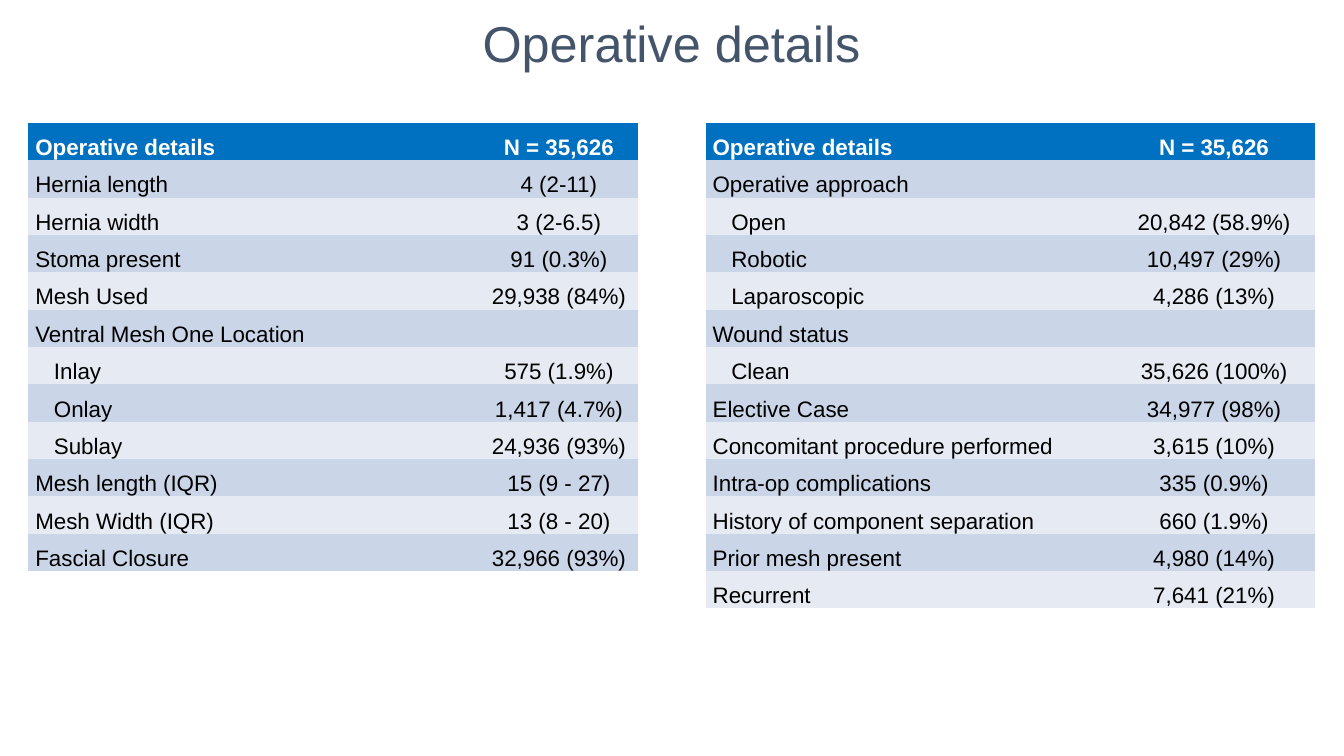
from pptx import Presentation
from pptx.dml.color import RGBColor
from pptx.enum.text import MSO_ANCHOR, PP_ALIGN
from pptx.oxml.ns import qn
from pptx.util import Cm, Pt

TITLE = "Operative details"
HEADER = ("Operative details", "N = 35,626", 0)

LEFT_ROWS = [
    HEADER,
    ("Hernia length", "4 (2-11)", 0),
    ("Hernia width", "3 (2-6.5)", 0),
    ("Stoma present", "91 (0.3%)", 0),
    ("Mesh Used", "29,938 (84%)", 0),
    ("Ventral Mesh One Location", "", 0),
    ("Inlay", "575 (1.9%)", 1),
    ("Onlay", "1,417 (4.7%)", 1),
    ("Sublay", "24,936 (93%)", 1),
    ("Mesh length (IQR)", "15 (9 - 27)", 0),
    ("Mesh Width (IQR)", "13 (8 - 20)", 0),
    ("Fascial Closure", "32,966 (93%)", 0),
]
RIGHT_ROWS = [
    HEADER,
    ("Operative approach", "", 0),
    ("Open", "20,842 (58.9%)", 1),
    ("Robotic", "10,497 (29%)", 1),
    ("Laparoscopic", "4,286 (13%)", 1),
    ("Wound status", "", 0),
    ("Clean", "35,626 (100%)", 1),
    ("Elective Case", "34,977 (98%)", 0),
    ("Concomitant procedure performed", "3,615 (10%)", 0),
    ("Intra-op complications", "335 (0.9%)", 0),
    ("History of component separation", "660 (1.9%)", 0),
    ("Prior mesh present", "4,980 (14%)", 0),
    ("Recurrent", "7,641 (21%)", 0),
]
TABLES = [
    (Cm(0.71), (Cm(11.38), Cm(3.99)), LEFT_ROWS),
    (Cm(17.78), (Cm(10.26), Cm(5.11)), RIGHT_ROWS),
]

FONT = "Arial"
SLATE = RGBColor(0x44, 0x54, 0x6A)
BLUE = RGBColor(0x00, 0x70, 0xC0)
DARK_BAND = RGBColor(0xCA, 0xD5, 0xE7)
LIGHT_BAND = RGBColor(0xE6, 0xEB, 0xF3)
WHITE = RGBColor(0xFF, 0xFF, 0xFF)
BLACK = RGBColor(0x00, 0x00, 0x00)

TABLE_TOP = Cm(3.1)
ROW_HEIGHT = Cm(0.94)
CELL_MARGIN = Cm(0.18)
INDENT = Cm(0.47)
PLAIN_TABLE_STYLE = "{2D5ABB26-0587-4C30-8999-92F81FD0307C}"


def format_runs(paragraph, size, color, bold=False):
    for run in paragraph.runs:
        run.font.name = FONT
        run.font.size = Pt(size)
        run.font.bold = bold
        run.font.color.rgb = color


def add_title(slide):
    title = slide.shapes.title
    title.left, title.top = Cm(11.02), Cm(0.2)
    title.width, title.height = Cm(11.81), Cm(1.91)
    title.text_frame.text = TITLE
    title.text_frame.vertical_anchor = MSO_ANCHOR.MIDDLE
    paragraph = title.text_frame.paragraphs[0]
    paragraph.alignment = PP_ALIGN.CENTER
    paragraph.line_spacing = 0.9
    format_runs(paragraph, 36, SLATE)


def fill_cell(cell, text, alignment, level, is_header, band):
    cell.margin_left = CELL_MARGIN + level * INDENT
    cell.margin_right = CELL_MARGIN
    cell.margin_top = cell.margin_bottom = 0
    cell.fill.solid()
    cell.fill.fore_color.rgb = band
    if not text:
        return
    cell.text_frame.text = text
    paragraph = cell.text_frame.paragraphs[0]
    paragraph.alignment = alignment
    paragraph.line_spacing = 1.5
    paragraph.space_after = Pt(8)
    format_runs(paragraph, 16, WHITE if is_header else BLACK, is_header)


def add_details_table(slide, left, widths, rows):
    frame = slide.shapes.add_table(
        len(rows), len(widths), left, TABLE_TOP, sum(widths), ROW_HEIGHT * len(rows)
    )
    table = frame.table
    table._tbl.tblPr.find(qn("a:tableStyleId")).text = PLAIN_TABLE_STYLE
    for column, width in zip(table.columns, widths):
        column.width = width
    for index, (label, value, level) in enumerate(rows):
        is_header = index == 0
        band = BLUE if is_header else (LIGHT_BAND, DARK_BAND)[index % 2]
        fill_cell(table.cell(index, 0), label, PP_ALIGN.LEFT, level, is_header, band)
        fill_cell(table.cell(index, 1), value, PP_ALIGN.CENTER, 0, is_header, band)


def main():
    presentation = Presentation()
    presentation.slide_width = Cm(33.87)
    presentation.slide_height = Cm(19.05)
    slide = presentation.slides.add_slide(presentation.slide_layouts[5])
    add_title(slide)
    for left, widths, rows in TABLES:
        add_details_table(slide, left, widths, rows)
    presentation.save("out.pptx")


if __name__ == "__main__":
    main()
